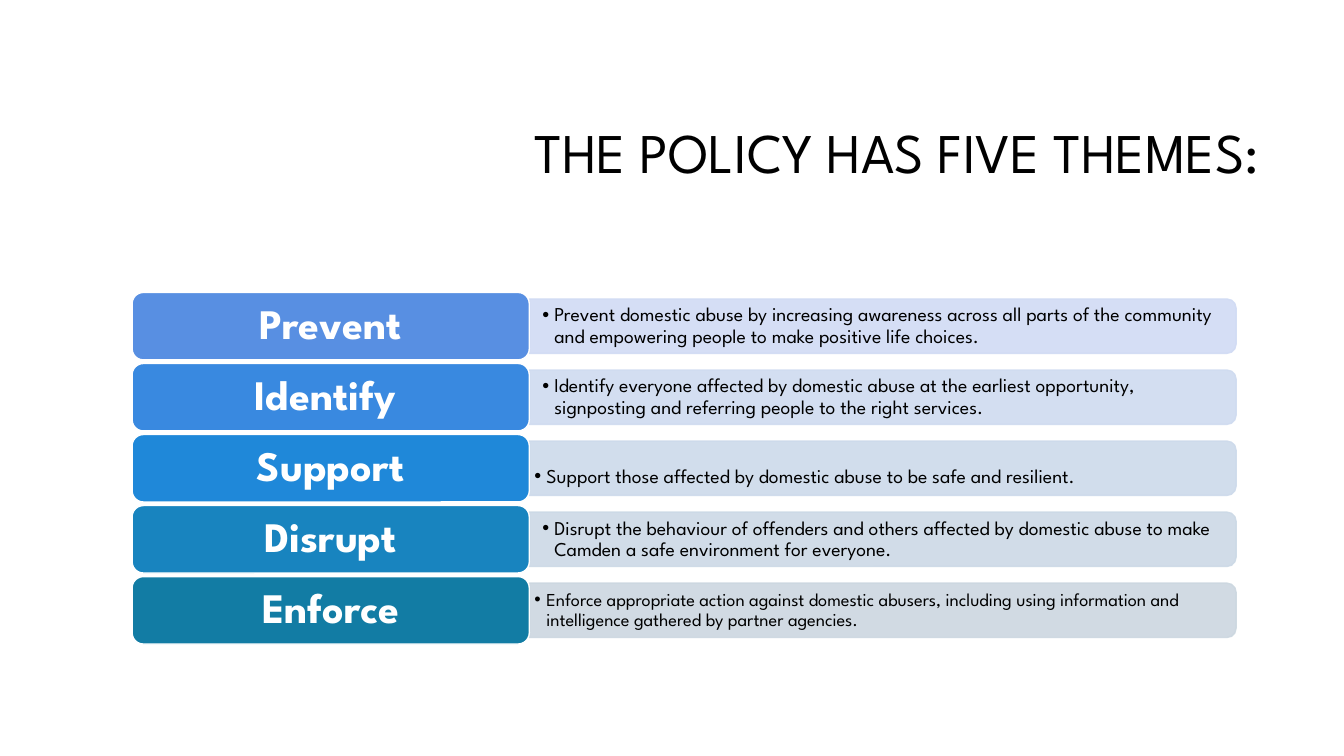
from pptx import Presentation
from pptx import util as u
from pptx.dml.color import RGBColor
from pptx.enum import shapes, text
from pptx.oxml.ns import qn
from lxml import etree

FONT = "League Spartan"
COLOURS = {
    "ink": "000000", "white": "FFFFFF",
    "Prevent": "588FE2", "Identify": "3989E0", "Support": "1F88D9",
    "Disrupt": "1884BF", "Enforce": "127CA4",
    "Prevent panel": "D1DBF4", "Identify panel": "CFDBF0", "Support panel": "CDDAEB",
    "Disrupt panel": "CCD9E6", "Enforce panel": "CCD7E0",
}
WIDE, TIGHT, LOWERED = (0.33, 0.15, 0.33, 0.15), (0.13, 0.08, 0.13, 0.08), (0.13, 0.53, 0.13, 0.08)
# Theme, description, text size, insets (left, top, right, bottom)
THEMES = [
    ("Prevent", "Prevent domestic abuse by increasing awareness across all parts of the community "
     "and empowering people to make positive life choices.", 14, WIDE),
    ("Identify ", "Identify everyone affected by domestic abuse at the earliest opportunity, "
     "signposting and referring people to the right services.", 14, WIDE),
    ("Support", "Support those affected by domestic abuse to be safe and resilient.", 14, LOWERED),
    ("Disrupt", "Disrupt the behaviour of offenders and others affected by domestic abuse to make "
     "Camden a safe environment for everyone.", 14, WIDE),
    ("Enforce", "Enforce appropriate action against domestic abusers, including using information "
     "and intelligence gathered by partner agencies. ", 13, TIGHT),
]


def colour(name):
    return RGBColor.from_string(COLOURS[name])


def write(shape, words, size, ink="ink", bold=False, align=text.PP_ALIGN.LEFT,
          insets=(0.25, 0.13, 0.25, 0.13), bullet=False):
    frame = shape.text_frame
    frame.word_wrap = True
    frame.vertical_anchor = text.MSO_ANCHOR.MIDDLE
    frame.margin_left, frame.margin_top, frame.margin_right, frame.margin_bottom = map(u.Cm, insets)
    para = frame.paragraphs[0]
    para.alignment = align
    para.line_spacing = 0.9
    if bullet:
        props = para._p.get_or_add_pPr()
        props.set("marL", str(u.Cm(0.3)))
        props.set("indent", str(-u.Cm(0.3)))
        etree.SubElement(props, qn("a:buFont")).set("typeface", "Arial")
        etree.SubElement(props, qn("a:buChar")).set("char", "•")
    run = para.add_run()
    run.text = words
    run.font.name, run.font.size, run.font.bold = FONT, u.Pt(size), bold
    run.font.color.rgb = colour(ink)


def add_block(slide, kind, left, top, width, height, fill, line, alpha=None):
    block = slide.shapes.add_shape(kind, u.Cm(left), u.Cm(top), u.Cm(width), u.Cm(height))
    block.shadow.inherit = False
    block.fill.solid()
    block.fill.fore_color.rgb = colour(fill)
    block.line.color.rgb = colour(line)
    block.line.width = u.Pt(1)
    if alpha:
        for tint in block._element.spPr.iter(qn("a:srgbClr")):
            etree.SubElement(tint, qn("a:alpha")).set("val", str(alpha * 1000))
    return block


def add_title(slide, left, top, width, height):
    title = slide.shapes.add_textbox(u.Cm(left), u.Cm(top), u.Cm(width), u.Cm(height))
    write(title, "THE POLICY HAS FIVE THEMES:", 40, align=text.PP_ALIGN.RIGHT)


def add_theme(slide, theme, left, top, width, height):
    name, description, size, insets = theme
    key = name.strip()
    label_width, panel_height = 10.01, 1.37
    panel_left, panel_width = left + label_width, width - label_width
    panel_top = top + (height - panel_height) / 2

    # Panel: a quarter turn puts the rounded corners on the right
    panel = add_block(slide, shapes.MSO_SHAPE.ROUND_2_SAME_RECTANGLE,
                      panel_left + (panel_width - panel_height) / 2,
                      panel_top + (panel_height - panel_width) / 2,
                      panel_height, panel_width, key + " panel", key + " panel", alpha=90)
    panel.rotation = 90

    # Description
    body = slide.shapes.add_textbox(u.Cm(panel_left), u.Cm(panel_top + 0.07),
                                    u.Cm(panel_width - 0.08), u.Cm(panel_height - 0.14))
    write(body, description, size, insets=insets, bullet=True)

    # Label
    label = add_block(slide, shapes.MSO_SHAPE.ROUNDED_RECTANGLE, left, top,
                      label_width, height, key, "white")
    write(label, name, 30, ink="white", bold=True, align=text.PP_ALIGN.CENTER)


def add_themes(slide, left, top, width, height, pitch=1.79):
    for row, theme in enumerate(THEMES):
        add_theme(slide, theme, left, top + row * pitch, width, height - (len(THEMES) - 1) * pitch)


def main():
    deck = Presentation()
    deck.slide_width, deck.slide_height = u.Cm(33.87), u.Cm(19.05)
    slide = deck.slides.add_slide(deck.slide_layouts[6])
    add_themes(slide, 3.33, 7.37, 27.82, 8.86)
    add_title(slide, 8.05, 2.13, 23.93, 3.58)
    deck.save("out.pptx")


if __name__ == "__main__":
    main()
